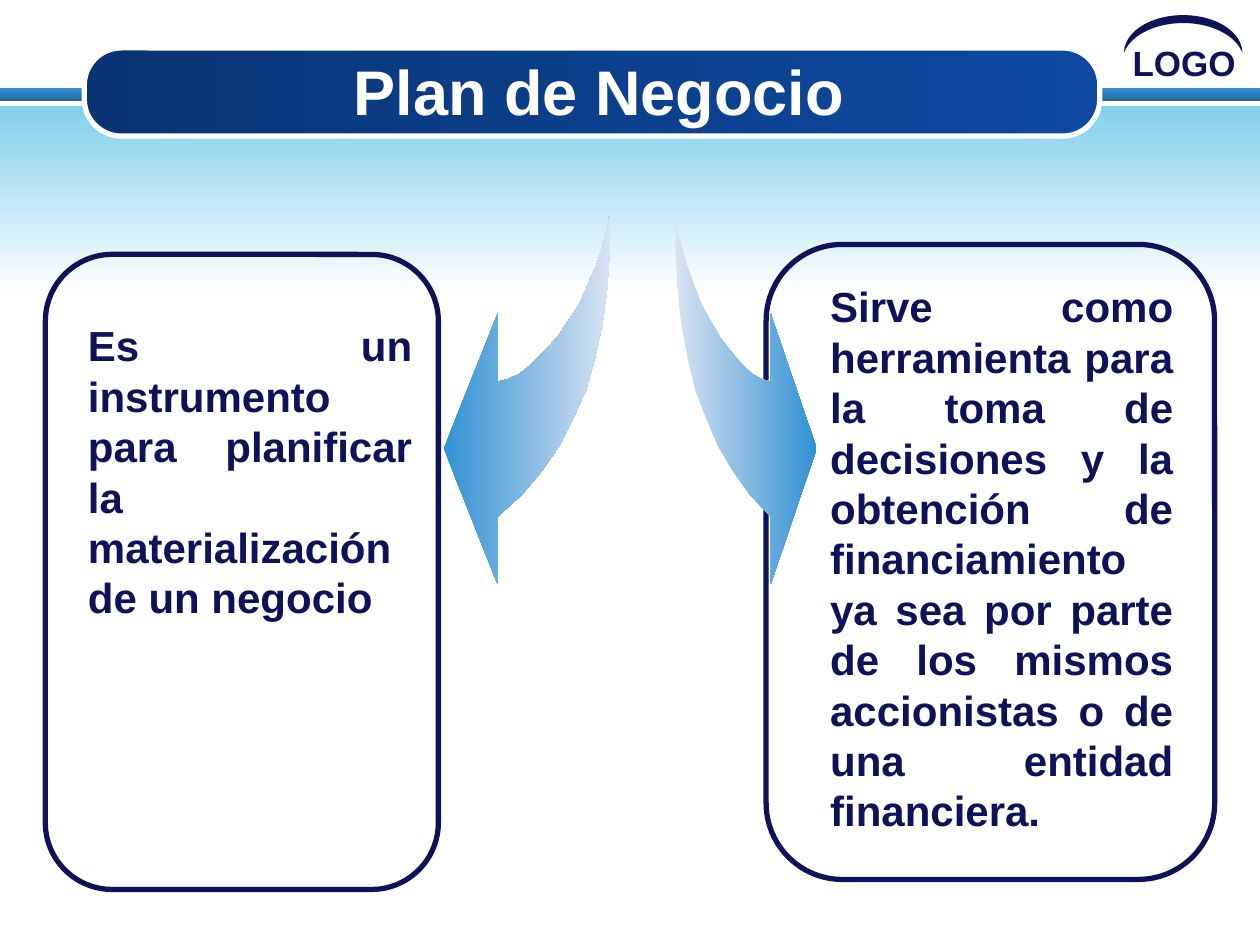
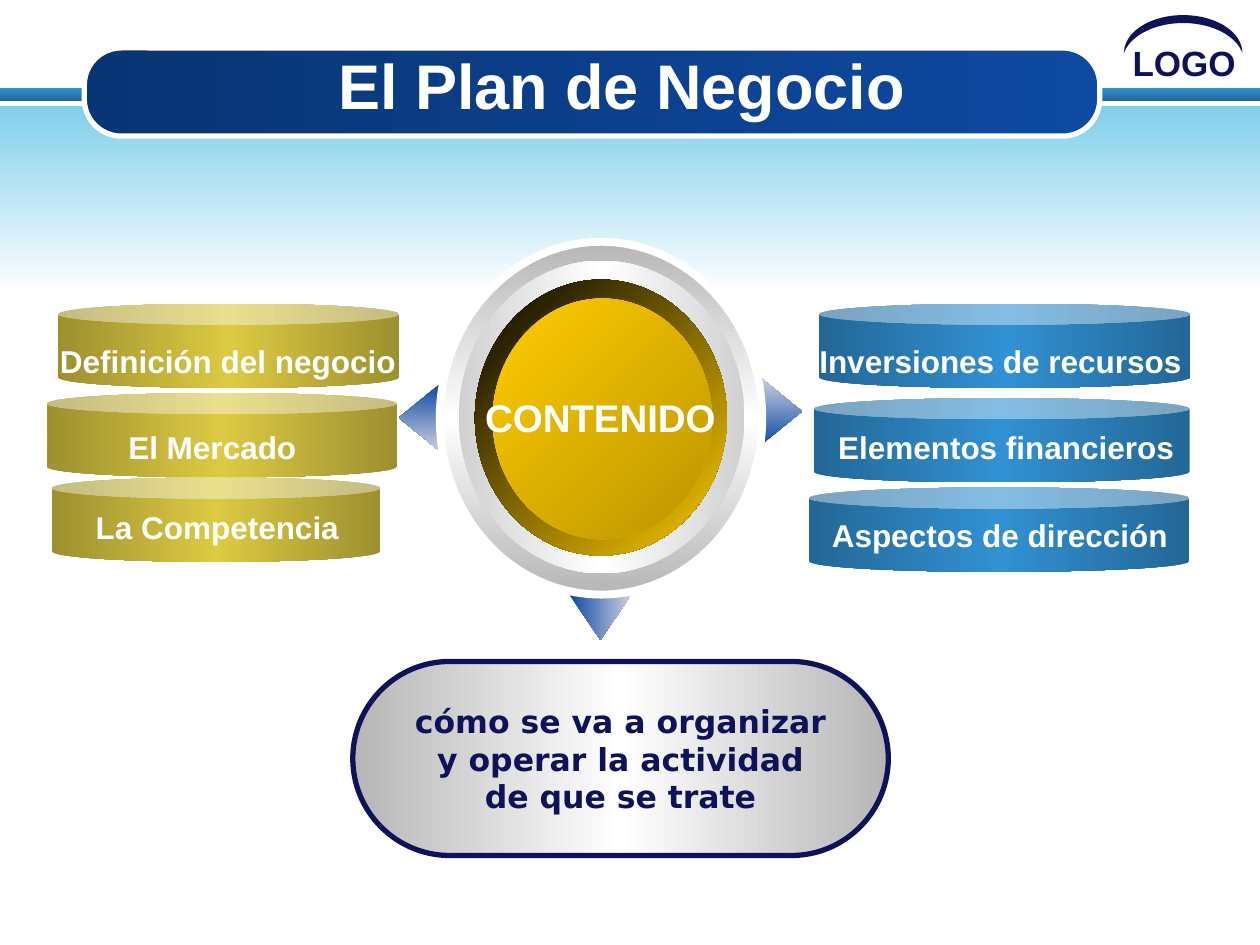
from dataclasses import dataclass
from typing import NamedTuple, Optional, Union

from lxml import etree
from pptx import Presentation
from pptx import util as u
from pptx.dml.color import RGBColor
from pptx.enum import shapes, text
from pptx.oxml.ns import qn

Pt = u.Pt
Kind = shapes.MSO_SHAPE
Align = text.PP_ALIGN


class Box(NamedTuple):
    """Left, top, width and height in points."""
    x: float
    y: float
    w: float
    h: float


class Stop(NamedTuple):
    """Gradient stop; tone is 'shade' or 'tint' with amount in percent."""
    pos: int
    color: str
    tone: str = ""
    amount: float = 0


class Gradient(NamedTuple):
    stops: tuple[Stop, ...]
    angle: int = 0


Fill = Union[Gradient, str, None]


@dataclass(frozen=True)
class Theme:
    navy: str = "0D1259"
    white: str = "FFFFFF"
    royal: str = "0E4AA2"
    blue: str = "3191D3"
    sky: str = "81CFEB"
    gold: str = "FFCC00"
    olive: str = "DCCA42"
    black: str = "000000"
    font: str = "Arial"
    note_font: str = "DejaVu Sans"
    title: float = 36
    body: float = 24
    hub: float = 22
    logo: float = 20
    label: float = 18
    outline: float = 3
    ring_outline: float = 4.5
    dark: float = 46.27


T = Theme()


@dataclass(frozen=True)
class Disk:
    """A can and the text box that labels it."""
    name: str
    x: float
    y: float
    w: float
    label_x: float
    label_y: float
    label_w: float


@dataclass(frozen=True)
class Pointer:
    box: Box
    rotation: float


# ---- helpers ----
def dark_edges(color: str, angle: int = 0, amount: float = T.dark) -> Gradient:
    edge = (color, "shade", amount)
    return Gradient((Stop(0, *edge), Stop(50, color), Stop(100, *edge)), angle)


def paint(sp, fill: Fill) -> None:
    if fill is None:
        sp.fill.background()
    elif isinstance(fill, str):
        sp.fill.solid()
        sp.fill.fore_color.rgb = RGBColor.from_string(fill)
    else:
        sp.fill.gradient()
        grad = sp.element.spPr.find(qn("a:gradFill"))
        for child in list(grad):
            grad.remove(child)
        grad.set("rotWithShape", "1")
        stops = etree.SubElement(grad, qn("a:gsLst"))
        for stop in fill.stops:
            gs = etree.SubElement(stops, qn("a:gs"), pos=str(stop.pos * 1000))
            clr = etree.SubElement(gs, qn("a:srgbClr"), val=stop.color)
            if stop.tone:
                etree.SubElement(clr, qn(f"a:{stop.tone}"), val=str(round(stop.amount * 1000)))
        etree.SubElement(grad, qn("a:lin"), ang=str(fill.angle * 60000), scaled="1")


def finish(sp, fill: Fill, line: Optional[str] = None, width: float = T.outline) -> None:
    sp.shadow.inherit = False
    paint(sp, fill)
    if line:
        sp.line.color.rgb = RGBColor.from_string(line)
        sp.line.width = Pt(width)
    else:
        sp.line.fill.background()


def add_shape(slide, kind, box: Box, fill: Fill = None, line: Optional[str] = None,
              width: float = T.outline, adj: tuple[float, ...] = (),
              rotation: float = 0, flip: bool = False):
    sp = slide.shapes.add_shape(kind, *map(Pt, box))
    finish(sp, fill, line, width)
    for i, value in enumerate(adj):
        sp.adjustments[i] = value
    sp.rotation = rotation
    if flip:
        sp.element.spPr.find(qn("a:xfrm")).set("flipH", "1")
    return sp


def write(tf, lines: list[str], size: float, color: str,
          align=Align.CENTER, font: str = T.font) -> None:
    for i, line in enumerate(lines):
        p = tf.paragraphs[0] if i == 0 else tf.add_paragraph()
        p.text = line
        p.alignment = align
        p.font.name, p.font.size, p.font.bold = font, Pt(size), True
        p.font.color.rgb = RGBColor.from_string(color)


def add_text(slide, box: Box, line: str, size: float, color: str,
             align=Align.CENTER, wrap: bool = False) -> None:
    tf = slide.shapes.add_textbox(*map(Pt, box)).text_frame
    tf.word_wrap = wrap
    tf.auto_size = text.MSO_AUTO_SIZE.SHAPE_TO_FIT_TEXT
    write(tf, [line], size, color, align)


def set_title(slide, x: float, y: float, line: str) -> None:
    sp = slide.shapes.title
    sp.left, sp.top, sp.width, sp.height = map(Pt, (x, y, 552.2, 44.6))
    tf = sp.text_frame
    tf.word_wrap = True
    tf.auto_size = text.MSO_AUTO_SIZE.NONE
    tf.vertical_anchor = text.MSO_ANCHOR.MIDDLE
    write(tf, [line], T.title, T.white)


def add_frame(slide, layout) -> None:
    """Draw the shared header and move it to the layout."""
    first = len(slide.shapes)
    add_shape(slide, Kind.RECTANGLE, Box(0, 50.4, 720, 7.2),
              Gradient((Stop(0, T.blue), Stop(100, T.blue, "shade", T.dark)), 90))
    add_shape(slide, Kind.RECTANGLE, Box(0, 60.5, 720, 107.3),
              Gradient((Stop(0, T.sky), Stop(100, T.white)), 90))
    add_shape(slide, Kind.ROUNDED_RECTANGLE, Box(48.2, 27.4, 580.3, 50.4),
              Gradient((Stop(0, T.royal, "shade", T.dark), Stop(100, T.royal))),
              T.white, adj=(0.42,))
    add_text(slide, Box(640.1, 20.2, 77.8, 31), "LOGO", T.logo, T.navy, Align.LEFT, True)
    add_shape(slide, Kind.MOON, Box(665.3, -14.4, 21.6, 67.7), T.navy,
              adj=(0.21,), rotation=90)
    for number, sp in enumerate(list(slide.shapes)[first:], 101):
        sp.element.nvSpPr.cNvPr.set("id", str(number))
        layout.shapes.element.append(sp.element)


# ---- slide 1: what the plan is for ----
# Curved arrow: distance away from the upper tip, and down from it
ARROW = [(0, 0), (0, 24.5), (1.4, 47.5), (4.3, 69.1), (8.6, 88.6), (13.7, 106.6),
         (20.9, 122.4), (28.8, 138.2), (38.9, 152.6), (50.4, 166.3), (64.1, 178.6),
         (64.1, 217.4), (95, 139.7), (64.1, 62.6), (64.1, 101.5), (58.3, 100.1),
         (51.8, 97.2), (44.6, 91.4), (37.4, 84.2), (30.2, 76.3), (23.8, 67),
         (17.3, 56.9), (12.2, 45.4), (7.2, 33.8), (3.6, 22.3), (0.7, 10.8)]


def add_curved_arrow(slide, tip_x: float, stretch: float) -> None:
    """Negative stretch points the arrow left, positive points it right."""
    points = [(Pt(tip_x + stretch * dx), Pt(116.6 + dy)) for dx, dy in ARROW]
    builder = slide.shapes.build_freeform(*points[0])
    builder.add_line_segments(points[1:], close=True)
    head, tail = (0, 100) if stretch < 0 else (100, 0)
    stops = (Stop(head, T.blue), Stop(tail, T.blue, "tint", 31.8))
    finish(builder.convert_to_shape(), Gradient(tuple(sorted(stops))))


def build_purpose(slide) -> None:
    set_title(slide, 66.2, 29.5, "Plan de Negocio")
    for box in (Box(437.8, 139.7, 256.3, 362.9), Box(25.9, 145.4, 224.6, 362.9)):
        add_shape(slide, Kind.ROUNDED_RECTANGLE, box, line=T.navy, adj=(0.17,))
    add_curved_arrow(slide, 348.5, -1)
    add_curved_arrow(slide, 385.9, 0.85)
    add_text(slide, Box(43.2, 179.3, 199.4, 181.4),
             "Es un instrumento para planificar la materialización de un negocio",
             T.body, T.navy, Align.JUSTIFY, True)
    add_text(slide, Box(467.3, 157, 210.2, 326.9),
             "Sirve como herramienta para la toma de decisiones y la obtención de "
             "financiamiento ya sea por parte de los mismos accionistas o de una "
             "entidad financiera.",
             T.body, T.navy, Align.JUSTIFY, True)


# ---- slide 2: contents of the plan ----
POINTERS = [
    Pointer(Box(220.3, 226.8, 38.9, 23.8), 270),
    Pointer(Box(427, 223.2, 38.9, 23.8), 90),
    Pointer(Box(325.4, 339.8, 35.3, 25.9), 180),
]
BUSINESS = [
    Disk("La Competencia", 29.5, 272.9, 187.9, 46.8, 286.6, 154.8),
    Disk("El Mercado", 26.6, 224.6, 200.2, 65.5, 241.2, 111.6),
    Disk("Definición del negocio", 33.1, 173.5, 195.1, 23.7, 192.2, 213.1),
]
RESOURCES = [
    Disk("Aspectos de dirección", 462.2, 278.6, 217.4, 467.3, 291.6, 208.1),
    Disk("Elementos financieros", 465.1, 227.5, 214.6, 470.9, 241.2, 208.1),
    Disk("Inversiones de recursos", 468, 173.5, 212.4, 454.7, 192.2, 234),
]


def add_hub(slide) -> None:
    pointer_fill = Gradient((Stop(0, T.royal), Stop(100, T.royal, "tint", 39)))
    for pointer in POINTERS:
        add_shape(slide, Kind.UP_ARROW, pointer.box, pointer_fill, adj=(0.52, 1),
                  rotation=pointer.rotation, flip=True)
    add_shape(slide, Kind.OVAL, Box(251.3, 138.2, 184.3, 201.6),
              dark_edges(T.white, 90), T.white, T.ring_outline)
    rings = [
        (Box(262.1, 149, 163.4, 178.6), dark_edges(T.white, amount=63.5)),
        (Box(271.4, 159.8, 144, 157.7),
         Gradient((Stop(0, T.black), Stop(100, T.gold)), 45)),
        (Box(281.5, 170.6, 125.3, 137.5),
         Gradient((Stop(0, T.gold), Stop(100, T.gold, "shade", 49)), 45)),
    ]
    for box, fill in rings:
        add_shape(slide, Kind.OVAL, box, fill)


def build_contents(slide) -> None:
    set_title(slide, 79.2, 25.9, "El Plan de Negocio")
    add_hub(slide)
    for disks, color in ((BUSINESS, T.olive), (RESOURCES, T.blue)):
        for d in disks:
            add_shape(slide, Kind.CAN, Box(d.x, d.y, d.w, 48.2), dark_edges(color), adj=(0.25,))
    add_text(slide, Box(269.3, 221.8, 147.6, 33.8), "CONTENIDO", T.hub, T.white)
    sp = add_shape(slide, Kind.ROUNDED_RECTANGLE, Box(201.6, 378, 306, 110.9),
                   dark_edges(T.white), T.navy, adj=(0.5,))
    tf = sp.text_frame
    tf.word_wrap = False
    tf.vertical_anchor = text.MSO_ANCHOR.MIDDLE
    write(tf, ["cómo se va a organizar", "y operar la actividad", "de que se trate"],
          T.label, T.navy, font=T.note_font)
    for d in BUSINESS + RESOURCES:
        add_text(slide, Box(d.label_x, d.label_y, d.label_w, 28.8), d.name, T.label, T.white)


def main() -> None:
    prs = Presentation()
    prs.slide_width, prs.slide_height = Pt(720), Pt(540)
    layout = prs.slide_layouts[5]
    purpose, contents = (prs.slides.add_slide(layout) for _ in range(2))
    add_frame(purpose, layout)
    build_purpose(purpose)
    build_contents(contents)
    prs.save("out.pptx")


if __name__ == "__main__":
    main()
